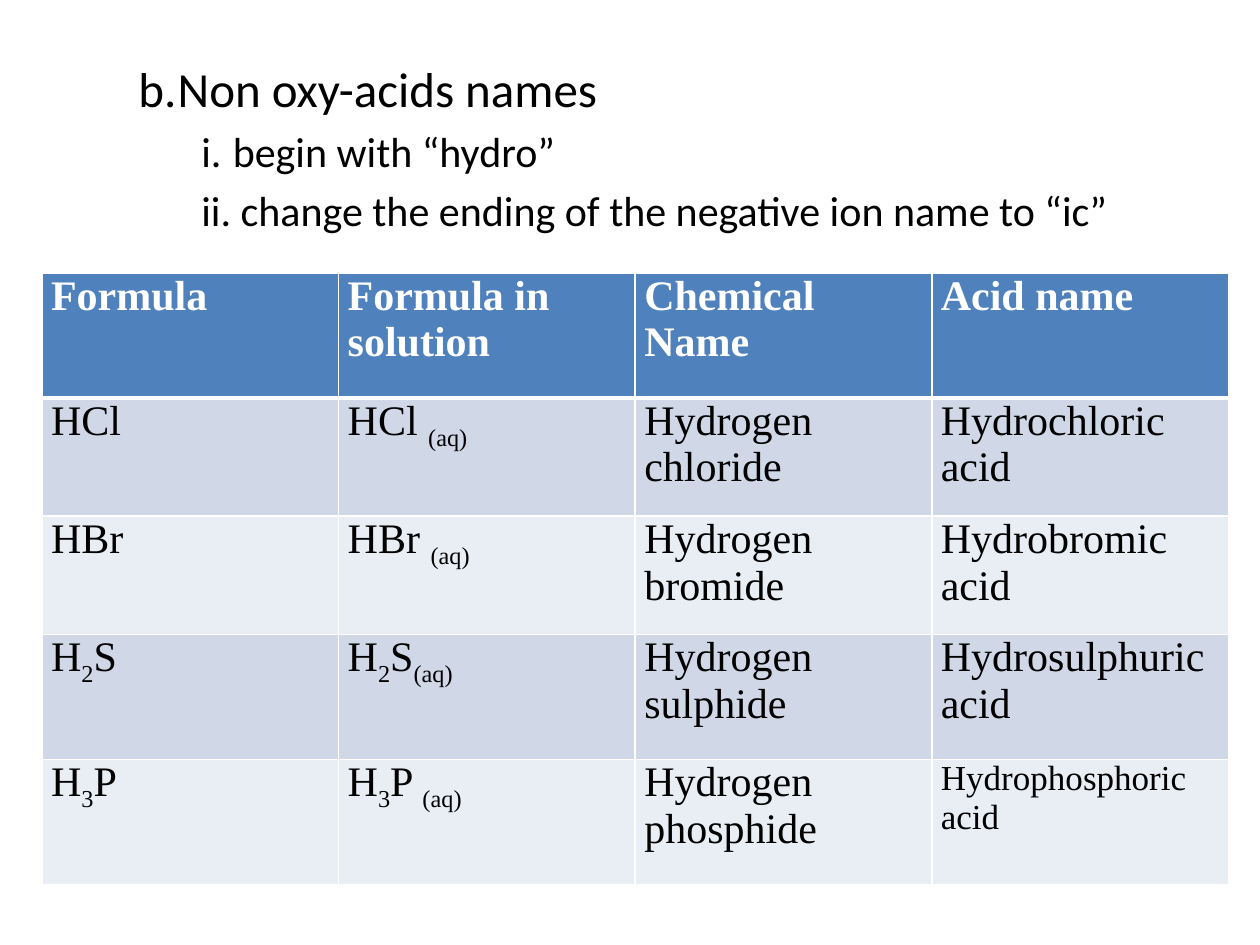
"""Build a slide on naming non oxy-acids, with a table of examples."""
from dataclasses import dataclass

from lxml import etree
from pptx import Presentation
from pptx.dml.color import RGBColor
from pptx.oxml.ns import qn
from pptx.util import Pt

BLANK_LAYOUT = 6
SUBSCRIPT_MARK = "_"


@dataclass(frozen=True)
class Theme:
    body_font: str = "Calibri"
    table_font: str = "Times New Roman"
    text: str = "000000"
    white: str = "FFFFFF"
    header_fill: str = "4F81BD"
    band_fills: tuple = ("D0D8E8", "E9EDF4")
    heading_size: int = 28
    text_size: int = 24
    small_size: int = 20


THEME = Theme()

RULES = [
    ("b.\tNon oxy-acids names", 1, THEME.heading_size, 58.5, -22.5),
    ("i.\tbegin with “hydro”", 2, THEME.text_size, 90, -18),
    ("ii. change the ending of the negative ion name to “ic”", 2, THEME.text_size, 90, -18),
]
ACIDS = [
    ("Formula", "Formula in solution", "Chemical Name", "Acid name"),
    ("HCl", "HCl _(aq)", "Hydrogen chloride", "Hydrochloric acid"),
    ("HBr", "HBr _(aq)", "Hydrogen bromide", "Hydrobromic acid"),
    ("H_2_S", "H_2_S_(aq)", "Hydrogen sulphide", "Hydrosulphuric acid"),
    ("H_3_P", "H_3_P _(aq)", "Hydrogen phosphide", "Hydrophosphoric acid"),
]
COLUMN_WIDTH = 169.5
ROW_HEIGHTS = (71.5, 67.5, 67.5, 71.5, 71.5)


def format_run(run, font, size, color, bold=False):
    run.font.name = font
    run.font.size = Pt(size)
    run.font.bold = bold
    run.font.color.rgb = RGBColor.from_string(color)


def add_rules(slide):
    shape = slide.shapes.add_textbox(Pt(36), Pt(30), Pt(648), Pt(114))
    text_frame = shape.text_frame
    text_frame.word_wrap = True
    text_frame.text = "\n".join(rule[0] for rule in RULES)
    for paragraph, (_, level, size, margin, indent) in zip(text_frame.paragraphs, RULES):
        paragraph.level = level
        paragraph.space_before = Pt(round(size * 0.2, 1))
        properties = paragraph._p.get_or_add_pPr()
        properties.set("marL", str(Pt(margin)))
        properties.set("indent", str(Pt(indent)))
        for run in paragraph.runs:
            format_run(run, THEME.body_font, size, THEME.text)


def add_borders(cell, top, bottom):
    properties = cell._tc.get_or_add_tcPr()
    for side, width in (("L", 1), ("R", 1), ("T", top), ("B", bottom)):
        line = etree.SubElement(properties, qn(f"a:ln{side}"), w=str(Pt(width)))
        fill = etree.SubElement(line, qn("a:solidFill"))
        etree.SubElement(fill, qn("a:srgbClr"), val=THEME.white)


def fill_cell(cell, text, size, color, fill, bold):
    cell.margin_left = cell.margin_right = Pt(5.2)
    cell.margin_top = cell.margin_bottom = 0
    cell.fill.solid()
    cell.fill.fore_color.rgb = RGBColor.from_string(fill)
    paragraph = cell.text_frame.paragraphs[0]
    for index, part in enumerate(text.split(SUBSCRIPT_MARK)):
        if not part:
            continue
        run = paragraph.add_run()
        run.text = part
        format_run(run, THEME.table_font, size, color, bold)
        if index % 2:
            run._r.get_or_add_rPr().set("baseline", "-25000")


def add_acid_table(slide):
    columns = len(ACIDS[0])
    frame = slide.shapes.add_table(len(ACIDS), columns, Pt(24), Pt(156),
                                   Pt(COLUMN_WIDTH * columns), Pt(sum(ROW_HEIGHTS)))
    table = frame.table
    for column in table.columns:
        column.width = Pt(COLUMN_WIDTH)
    for row_index, (values, height) in enumerate(zip(ACIDS, ROW_HEIGHTS)):
        table.rows[row_index].height = Pt(height)
        header = row_index == 0
        fill = THEME.header_fill if header else THEME.band_fills[(row_index - 1) % 2]
        color = THEME.white if header else THEME.text
        for column_index, text in enumerate(values):
            cell = table.cell(row_index, column_index)
            size = THEME.small_size if text == "Hydrophosphoric acid" else THEME.text_size
            add_borders(cell, 3 if row_index == 1 else 1, 3 if header else 1)
            fill_cell(cell, text, size, color, fill, header)


def main():
    presentation = Presentation()
    presentation.slide_width = Pt(720)
    presentation.slide_height = Pt(540)
    slide = presentation.slides.add_slide(presentation.slide_layouts[BLANK_LAYOUT])
    add_rules(slide)
    add_acid_table(slide)
    presentation.save("out.pptx")


if __name__ == "__main__":
    main()
